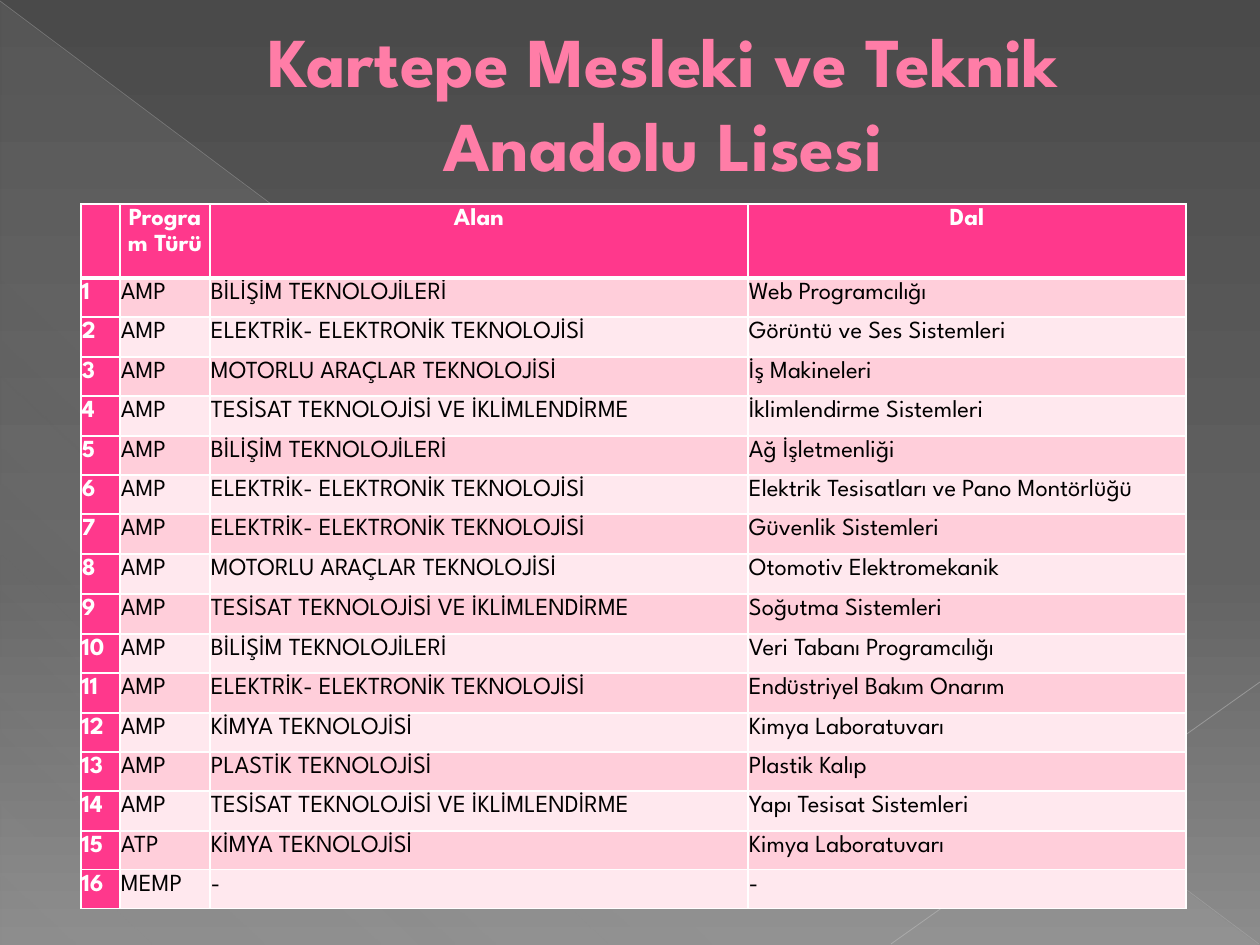
from pptx import Presentation
from pptx.dml.color import RGBColor as Rgb
from pptx.enum.shapes import MSO_CONNECTOR as Link, MSO_SHAPE as Kind
from pptx.enum.text import MSO_ANCHOR as Anchor, MSO_AUTO_SIZE as Fit, PP_ALIGN as Align
from pptx.oxml.ns import qn
from pptx.oxml.xmlchemy import OxmlElement as Node
from pptx.util import Pt

UNIT = 914400 / 126
FONT = "League Spartan"
HUES = {
    "white": "FFFFFF", "black": "000000", "pink": "FF388C", "title": "FF7DA7",
    "edge": "B12761", "odd": "FFCEDA", "even": "FFE8EE", "glow": "D2D2D2",
    "long": "BFBFBF", "short": "C6C6C6", "dark": "4A4A4A", "mid": "626262",
    "light": "8C8C8C",
}
BT, EL = "BİLİŞİM TEKNOLOJİLERİ", "ELEKTRİK- ELEKTRONİK TEKNOLOJİSİ"
MOTOR, TES = "MOTORLU ARAÇLAR TEKNOLOJİSİ", "TESİSAT TEKNOLOJİSİ VE İKLİMLENDİRME"
KIM, LAB = "KİMYA TEKNOLOJİSİ", "Kimya Laboratuvarı"
HEAD = ("", "Program Türü", "Alan", "Dal")
ROWS = [
    ("AMP", BT, "Web Programcılığı"),
    ("AMP", EL, "Görüntü ve Ses Sistemleri"),
    ("AMP", MOTOR, "İş Makineleri"),
    ("AMP", TES, "İklimlendirme Sistemleri"),
    ("AMP", BT, "Ağ İşletmenliği"),
    ("AMP", EL, "Elektrik Tesisatları ve Pano Montörlüğü"),
    ("AMP", EL, "Güvenlik Sistemleri"),
    ("AMP", MOTOR, "Otomotiv Elektromekanik"),
    ("AMP", TES, "Soğutma Sistemleri"),
    ("AMP", BT, "Veri Tabanı Programcılığı"),
    ("AMP", EL, "Endüstriyel Bakım Onarım"),
    ("AMP", KIM, LAB),
    ("AMP", "PLASTİK TEKNOLOJİSİ", "Plastik Kalıp"),
    ("AMP", TES, "Yapı Tesisat Sistemleri"),
    ("ATP", KIM, LAB),
    ("MEMP", "-", "-"),
]
COLS = (39, 90, 538, 438)
TALL = {2, 4, 7, 8, 9, 11, 14}


def px(num):
    return round(num * UNIT)


def paint(hue, alpha=100):
    fill, color = Node("a:solidFill"), Node("a:srgbClr")
    color.set("val", HUES[hue])
    if alpha < 100:
        part = Node("a:alpha")
        part.set("val", str(alpha * 1000))
        color.append(part)
    fill.append(color)
    return fill


def stroke(tag, hue, width):
    line = Node(tag)
    line.set("w", str(Pt(width)))
    line.append(paint(hue))
    return line


def blend(fill, root, stops, angle):
    fill.gradient()
    fill.gradient_angle = 360 - angle
    group = root.find(".//" + qn("a:gsLst"))
    for old in list(group):
        group.remove(old)
    for pos, hue, alpha in stops:
        stop = Node("a:gs")
        stop.set("pos", str(pos * 1000))
        stop.append(paint(hue, alpha)[0])
        group.append(stop)


def write(frame, text, size=14, hue="black", bold=False, align=Align.LEFT, space=None):
    para = frame.paragraphs[0]
    para.alignment = align
    para.line_spacing = space
    run = para.add_run()
    run.text = text
    font = run.font
    font.name, font.size, font.bold = FONT, Pt(size), bold
    font.color.rgb = Rgb.from_string(HUES[hue])
    return para


class Deck:
    """Holds the style and the current slide."""

    def __init__(self):
        self.show = Presentation()
        self.show.slide_width, self.show.slide_height = px(1260), px(945)
        self.slide = self.show.slides.add_slide(self.show.slide_layouts[5])
        self.shapes = self.slide.shapes

    def back(self, stops, angle):
        blend(self.slide.background.fill, self.slide.element, stops, angle)

    def wedge(self, x, y, wide, high, stops, angle):
        shape = self.shapes.add_shape(Kind.RIGHT_TRIANGLE, px(x), px(y), px(wide), px(high))
        shape.shadow.inherit = False
        shape.line.fill.background()
        blend(shape.fill, shape.element, stops, angle)

    def line(self, start, end, hue, width, alpha):
        link = self.shapes.add_connector(Link.STRAIGHT, *map(px, start + end))
        link.line.width = Pt(width)
        link.line.color.rgb = Rgb.from_string(HUES[hue])
        props = link.element.spPr
        edge = props.find(qn("a:ln"))
        edge.replace(edge.find(qn("a:solidFill")), paint(hue, alpha))
        props.append(Node("a:effectLst"))

    def title(self, text, x, y, wide, high, indent):
        box = self.shapes.title
        box.left, box.top, box.width, box.height = map(px, (x, y, wide, high))
        frame = box.text_frame
        frame.word_wrap, frame.auto_size = True, Fit.NONE
        frame.vertical_anchor = Anchor.MIDDLE
        para = write(frame, text, size=40, hue="title", bold=True, align=Align.CENTER)
        props = para._p.get_or_add_pPr()
        props.set("marL", str(px(indent)))
        props.set("indent", "0")
        para.runs[0].font._element.insert(0, stroke("a:ln", "edge", 0.5))
        self.shapes.element.append(box.element)

    def cell(self, cell, text, fill, top, base, **form):
        cell.margin_left = cell.margin_right = px(1)
        cell.margin_top = cell.margin_bottom = px(1)
        props = cell._tc.get_or_add_tcPr()
        for side, width in zip("LRTB", (1, 1, top, base)):
            props.append(stroke("a:ln" + side, "white", width))
        cell.fill.solid()
        cell.fill.fore_color.rgb = Rgb.from_string(HUES[fill])
        if text:
            write(cell.text_frame, text, space=1.15, **form)

    def table(self, x, y, cols, highs, rows):
        frame = self.shapes.add_table(
            len(rows), len(cols), px(x), px(y), px(sum(cols)), px(sum(highs)))
        grid = frame.table
        for col, wide in zip(grid.columns, cols):
            col.width = px(wide)
        for r, (row, high, texts) in enumerate(zip(grid.rows, highs, rows)):
            row.height = px(high)
            for c, text in enumerate(texts):
                key = r == 0 or c == 0
                fill = "pink" if key else "odd" if r % 2 else "even"
                self.cell(
                    grid.cell(r, c), text, fill,
                    top=3 if r == 1 else 1, base=3 if r == 0 else 1,
                    hue="white" if key else "black", bold=key,
                    align=Align.CENTER if r == 0 else Align.LEFT)


def main():
    deck = Deck()
    deck.back([(0, "dark", 100), (60, "mid", 100), (100, "light", 100)], 90)
    deck.wedge(1, 2, 1258, 943, [(0, "glow", 10), (70, "glow", 8), (100, "glow", 1)], 133)
    deck.line((0, 1), (1259, 944), "long", 0.39, 35)
    deck.line((1260, 682), (891, 944), "short", 0.47, 45)
    deck.title("Kartepe Mesleki ve Teknik Anadolu Lisesi", 63, 37, 1134, 129, 67)
    rows = [HEAD] + [(str(n), *row) for n, row in enumerate(ROWS, 1)]
    highs = [74] + [40 if n in TALL else 39 for n in range(1, len(rows))]
    deck.table(81, 204, COLS, highs, rows)
    deck.show.save("out.pptx")


if __name__ == "__main__":
    main()
